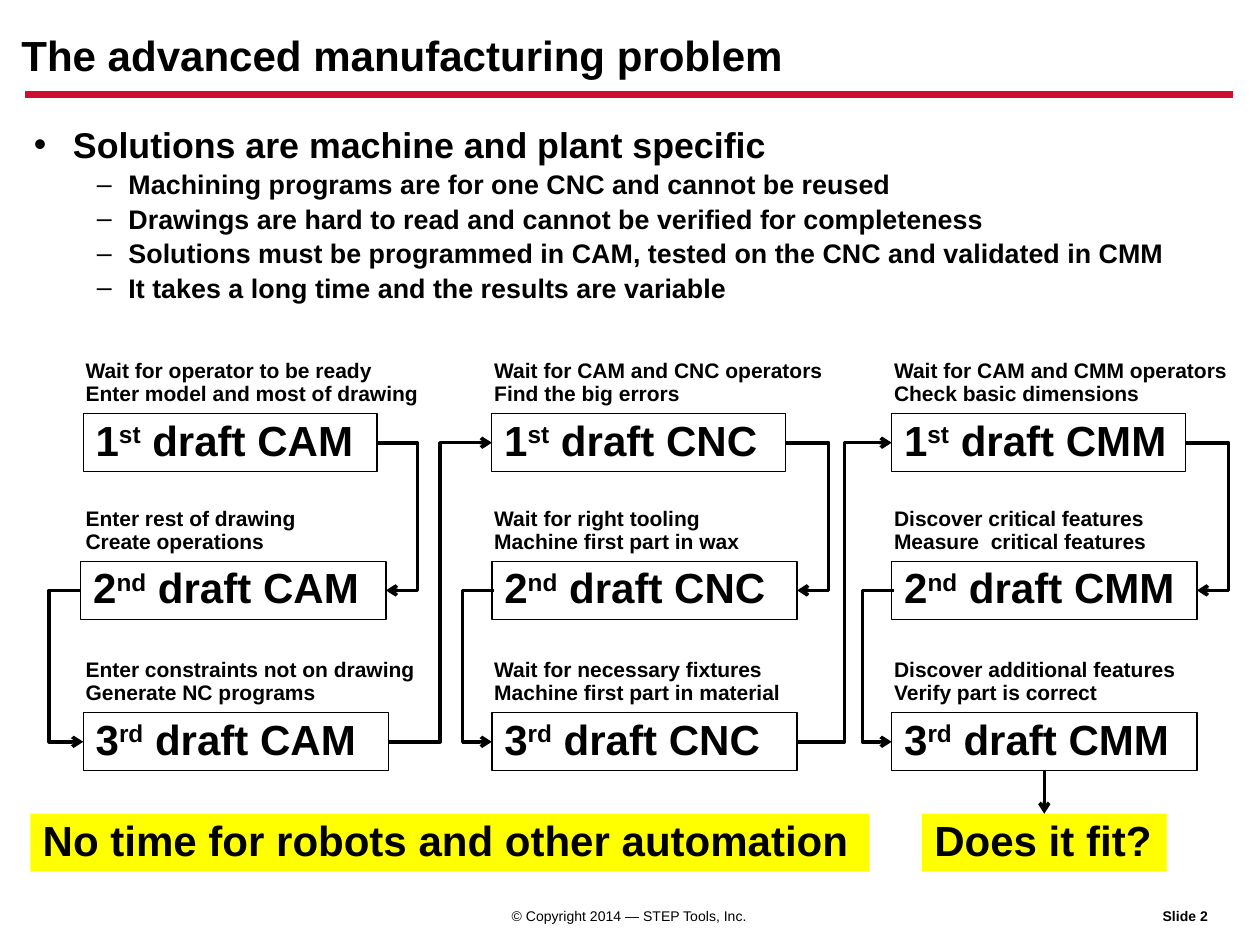
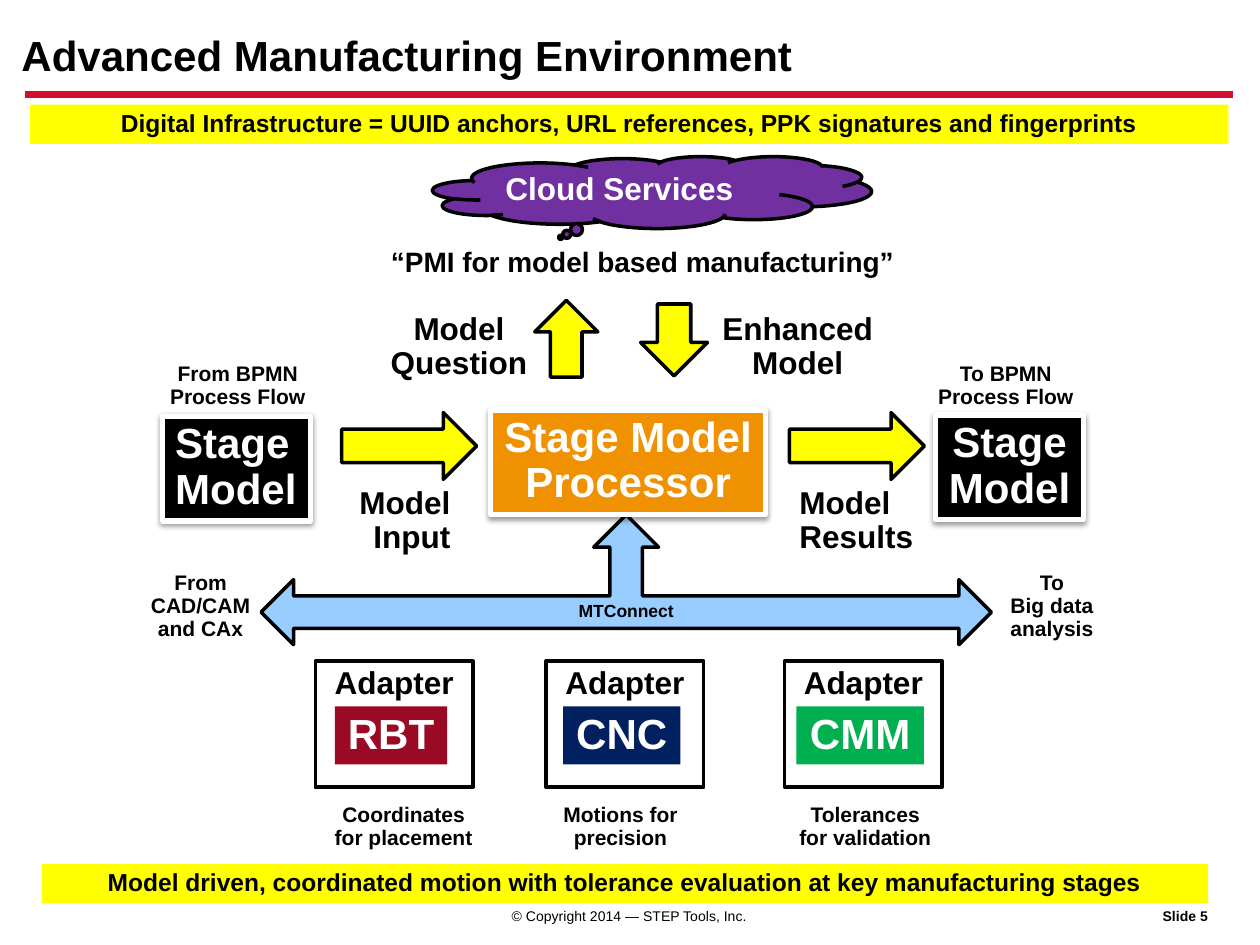
from dataclasses import dataclass

from lxml.etree import SubElement
from pptx import Presentation
from pptx.dml.color import RGBColor as Rgb
from pptx.enum.shapes import MSO_AUTO_SHAPE_TYPE as Kind, MSO_CONNECTOR as Route
from pptx.enum.text import MSO_VERTICAL_ANCHOR as Anchor, PP_PARAGRAPH_ALIGNMENT as Align
from pptx.oxml.ns import qn
from pptx.util import Inches, Pt


@dataclass(frozen=True)
class Theme:
    face: str = "Arial"
    black: Rgb = Rgb(0, 0, 0)
    white: Rgb = Rgb(255, 255, 255)
    rule: Rgb = Rgb(0xCF, 0x0E, 0x30)
    yellow: Rgb = Rgb(255, 255, 0)
    purple: Rgb = Rgb(0x70, 0x30, 0xA0)
    orange: Rgb = Rgb(0xEF, 0x91, 0)
    sky: Rgb = Rgb(0x99, 0xCC, 0xFF)
    robot: Rgb = Rgb(0x9B, 0x0A, 0x24)
    mill: Rgb = Rgb(0, 0x20, 0x60)
    gauge: Rgb = Rgb(0, 0xB0, 0x50)
    title: float = 24
    point: float = 20.4
    detail: float = 15.3
    label: float = 18
    quote: float = 16
    banner: float = 14
    caption: float = 12
    tiny: float = 10
    footer: float = 8
    hairline: float = 0.75
    stroke: float = 2
    frame: float = 3
    band: float = 4


THEME = Theme()
MARGINS = (0.1, 0.05, 0.1, 0.05)


class Deck:
    """Holds the style and the current slide, with a method for each kind of element."""

    def __init__(self):
        self.show = Presentation()
        self.show.slide_width, self.show.slide_height = Inches(9.99), Inches(7.49)
        self.slide = None

    def start(self, title, number):
        self.slide = self.show.slides.add_slide(self.show.slide_layouts[6])
        self.line((0.2, 0.75), (9.78, 0.75), THEME.rule, THEME.band, arrow=False)
        self.text((9.12, 7.16, 0.63, 0.22), [f"Slide {number}"], THEME.footer, wrap=False)
        self.text((3.94, 7.16, 2.1, 0.22), ["© Copyright 2014 — STEP Tools, Inc."],
                  THEME.footer, align=Align.CENTER, bold=False, wrap=False)
        self.text((0.17, 0.28, 6.17, 0.36), [title], THEME.title, wrap=False,
                  margins=(0, 0, 0, 0))

    def style(self, paragraph, size, color, bold, spacing):
        formats = {"name": THEME.face, "size": Pt(size), "bold": bold}
        for run in paragraph.runs:
            for name, value in formats.items():
                setattr(run.font, name, value)
            run.font.color.rgb = color
        paragraph.line_spacing = spacing

    def frame(self, shape, wrap, margins=MARGINS):
        frame = shape.text_frame
        formats = dict(zip(("margin_left", "margin_top", "margin_right", "margin_bottom"),
                           map(Inches, margins)))
        formats.update(word_wrap=wrap, vertical_anchor=Anchor.TOP)
        for name, value in formats.items():
            setattr(frame, name, value)
        return frame

    def letter(self, shape, lines, size, color=THEME.black, align=Align.LEFT,
               bold=True, wrap=True, margins=MARGINS):
        frame = self.frame(shape, wrap, margins)
        for index, line in enumerate(lines):
            paragraph = frame.add_paragraph() if index else frame.paragraphs[0]
            paragraph.alignment = align
            for place, words in enumerate((line,) if isinstance(line, str) else line):
                run = paragraph.add_run()
                run.text = words
                if place % 2:
                    run._r.get_or_add_rPr().set("baseline", "30000")
            self.style(paragraph, size, color, bold, 0.9)

    def text(self, at, lines, size, **options):
        self.letter(self.slide.shapes.add_textbox(*map(Inches, at)), lines, size, **options)

    def shape(self, at, kind=Kind.RECTANGLE, fill=None, line=None, width=THEME.stroke,
              lines=(), size=THEME.title, **options):
        shape = self.slide.shapes.add_shape(kind, *map(Inches, at))
        shape.shadow.inherit = False
        if fill is None:
            shape.fill.background()
        else:
            shape.fill.solid()
            shape.fill.fore_color.rgb = fill
        if line is None:
            shape.line.fill.background()
        else:
            shape.line.color.rgb = line
            shape.line.width = Pt(width)
        if lines:
            self.letter(shape, lines, size, **options)
        return shape

    def card(self, at, fill, lines, align=Align.CENTER):
        card = self.shape(at, fill=fill, line=THEME.white, width=THEME.frame, lines=lines,
                          color=THEME.white, align=align, wrap=False)
        effects = card._element.spPr.find(qn("a:effectLst"))
        shadow = SubElement(effects, qn("a:outerShdw"), blurRad=str(Pt(3.1)),
                            dist=str(Pt(1.6)), dir="5400000", rotWithShape="0")
        tint = SubElement(shadow, qn("a:srgbClr"), val=str(THEME.black))
        SubElement(tint, qn("a:alpha"), val="38000")

    def line(self, start, end, color=THEME.black, width=THEME.stroke, arrow=True,
             route=Route.STRAIGHT):
        line = self.slide.shapes.add_connector(route, *map(Inches, (*start, *end)))
        line.line.color.rgb = color
        line.line.width = Pt(width)
        if arrow:
            SubElement(line.line._get_or_add_ln(), qn("a:tailEnd"), type="arrow")
        SubElement(line._element.spPr, qn("a:effectLst"))
        return line

    def elbow(self, start, end, turn):
        elbow = self.line(start, end, route=Route.ELBOW)
        share = round((turn - start[0]) / (end[0] - start[0]) * 100000)
        geometry = elbow._element.spPr.find(qn("a:prstGeom"))
        SubElement(geometry.get_or_add_avLst(), qn("a:gd"), name="adj1", fmla=f"val {share}")

    def bullets(self, at, items):
        frame = self.frame(self.slide.shapes.add_textbox(*map(Inches, at)), True)
        levels = ((0.31, -0.31, "•", THEME.point), (0.75, -0.25, "–", THEME.detail))
        for index, (level, words) in enumerate(items):
            left, hanging, mark, size = levels[level]
            paragraph = frame.add_paragraph() if index else frame.paragraphs[0]
            paragraph.add_run().text = words
            paragraph.level = level
            if index:
                paragraph.space_before = Pt(5)
            properties = paragraph._p.get_or_add_pPr()
            properties.set("marL", str(Inches(left)))
            properties.set("indent", str(Inches(hanging)))
            self.style(paragraph, size, THEME.black, True, 0.8)
            SubElement(properties, qn("a:buFont"), typeface=THEME.face)
            SubElement(properties, qn("a:buChar"), char=mark)


def problem(deck):
    deck.start("The advanced manufacturing problem", 2)
    deck.bullets((0.17, 0.99, 9.82, 1.58), [
        (0, "Solutions are machine and plant specific"),
        (1, "Machining programs are for one CNC and cannot be reused"),
        (1, "Drawings are hard to read and cannot be verified for completeness"),
        (1, "Solutions must be programmed in CAM, tested on the CNC and validated in CMM"),
        (1, "It takes a long time and the results are variable"),
    ])
    stages = [
        ("CAM", 0.66, -0.02, [
            ("Wait for operator to be ready", "Enter model and most of drawing"),
            ("Enter rest of drawing", "Create operations"),
            ("Enter constraints not on drawing", "Generate NC programs")]),
        ("CNC", 3.9, 0, [
            ("Wait for CAM and CNC operators", "Find the big errors"),
            ("Wait for right tooling", "Machine first part in wax"),
            ("Wait for necessary fixtures", "Machine first part in material")]),
        ("CMM", 7.07, 0, [
            ("Wait for CAM and CMM operators", "Check basic dimensions"),
            ("Discover critical features", "Measure  critical features"),
            ("Discover additional features", "Verify part is correct")]),
    ]
    drafts = [("1", "st", 3.28, 2.33), ("2", "nd", 4.45, 2.42), ("3", "rd", 5.65, 2.42)]
    height = 0.46
    first, second, third = (top + height / 2 for _, _, top, _ in drafts)
    previous = None
    for stage, left, shift, notes in stages:
        for row, ((digit, suffix, top, width), note) in enumerate(zip(drafts, notes)):
            deck.text((left - 0.08, top - 0.47, 2.95, height), note, THEME.caption)
            draft = deck.shape((left + (shift if row == 1 else 0), top, width, height),
                               line=THEME.black, width=THEME.hairline,
                               lines=[(digit, suffix, f" draft {stage}")])
        right = left + shift + 2.42
        deck.elbow((left + 2.33, first), (right, second), right + 0.25)
        leave = left + (shift or 0.02)
        deck.elbow((leave, second), (left, third), leave - 0.25)
        if previous is not None:
            deck.elbow((previous, third), (left, first), (previous + left) / 2)
        previous = left + 2.42
    fit = deck.shape((7.31, 6.45, 1.94, height), fill=THEME.yellow, lines=["Does it fit?"],
                     wrap=False)
    check = deck.line((8.28, 6.11), (8.28, 6.45))
    check.begin_connect(draft, 2)
    check.end_connect(fit, 0)
    deck.shape((0.24, 6.45, 6.65, height), fill=THEME.yellow,
               lines=["No time for robots and other automation"])


def environment(deck):
    deck.start("Advanced Manufacturing Environment", 5)
    for at, words in [
        ((0.24, 0.83, 9.5, 0.31),
         "Digital Infrastructure = UUID anchors, URL references, PPK signatures and fingerprints"),
        ((0.33, 6.85, 9.25, 0.31),
         "Model driven, coordinated motion with tolerance evaluation at key manufacturing stages"),
    ]:
        deck.shape(at, fill=THEME.yellow, lines=[words], size=THEME.banner, align=Align.CENTER)
    deck.shape((3.43, 1.24, 3.48, 0.57), Kind.CLOUD_CALLOUT, THEME.purple, THEME.black,
               lines=["Cloud Services"], size=THEME.label, color=THEME.white)
    deck.shape((2.94, 1.92, 4.31, 0.34), fill=THEME.white, size=THEME.quote,
               lines=["“PMI for model based manufacturing”"], align=Align.CENTER)
    for at, kind in [
        ((2.71, 3.27, 1.07, 0.53), Kind.RIGHT_ARROW),
        ((6.26, 3.27, 1.07, 0.53), Kind.RIGHT_ARROW),
        ((4.24, 2.38, 0.5, 0.61), Kind.UP_ARROW),
        ((5.08, 2.41, 0.53, 0.57), Kind.DOWN_ARROW),
    ]:
        deck.shape(at, kind, THEME.yellow, THEME.black)
    deck.shape((2.07, 4.08, 5.79, 1.03), Kind.LEFT_RIGHT_UP_ARROW, THEME.sky, THEME.black,
               lines=["MTConnect"], size=THEME.tiny, align=Align.CENTER)
    deck.card((1.29, 3.3, 1.17, 0.83), THEME.black, ["Stage", "Model"], Align.LEFT)
    deck.card((7.42, 3.29, 1.17, 0.83), THEME.black, ["Stage", "Model"])
    deck.card((3.89, 3.25, 2.18, 0.83), THEME.orange, ["Stage Model", "Processor"])
    for left, top, width, lines, align in [
        (2.74, 3.81, 0.93, ("Model", "Input"), Align.RIGHT),
        (6.24, 3.81, 1.11, ("Model", "Results"), Align.LEFT),
        (2.99, 2.43, 1.3, ("Model", "Question"), Align.CENTER),
        (5.62, 2.43, 1.41, ("Enhanced", "Model"), Align.CENTER),
    ]:
        deck.text((left, top, width, 0.65), lines, THEME.label, align=align, wrap=False)
    for at, lines in [
        ((1.24, 2.83, 1.29, 0.46), ("From BPMN", "Process Flow")),
        ((7.33, 2.83, 1.29, 0.46), ("To BPMN", "Process Flow")),
        ((1.08, 4.49, 1.02, 0.65), ("From", "CAD/CAM and CAx")),
        ((7.83, 4.49, 1.02, 0.65), ("To", "Big data analysis")),
        ((2.49, 6.33, 1.42, 0.46), ("Coordinates for placement",)),
        ((4.33, 6.33, 1.18, 0.46), ("Motions for precision",)),
        ((6.22, 6.33, 1.28, 0.46), ("Tolerances for validation",)),
    ]:
        deck.text(at, lines, THEME.caption, align=Align.CENTER)
    for left, machine, width, fill in [
        (2.5, "RBT", 0.89, THEME.robot),
        (4.33, "CNC", 0.93, THEME.mill),
        (6.22, "CMM", 1.01, THEME.gauge),
    ]:
        deck.shape((left + 0.6 - width / 2, 5.6, width, 0.46), fill=fill, lines=[machine],
                   color=THEME.white, align=Align.CENTER, wrap=False)
        deck.shape((left, 5.24, 1.25, 1), line=THEME.black, lines=["Adapter"],
                   size=THEME.label, align=Align.CENTER)


def main():
    deck = Deck()
    problem(deck)
    environment(deck)
    deck.show.save("out.pptx")


if __name__ == "__main__":
    main()
